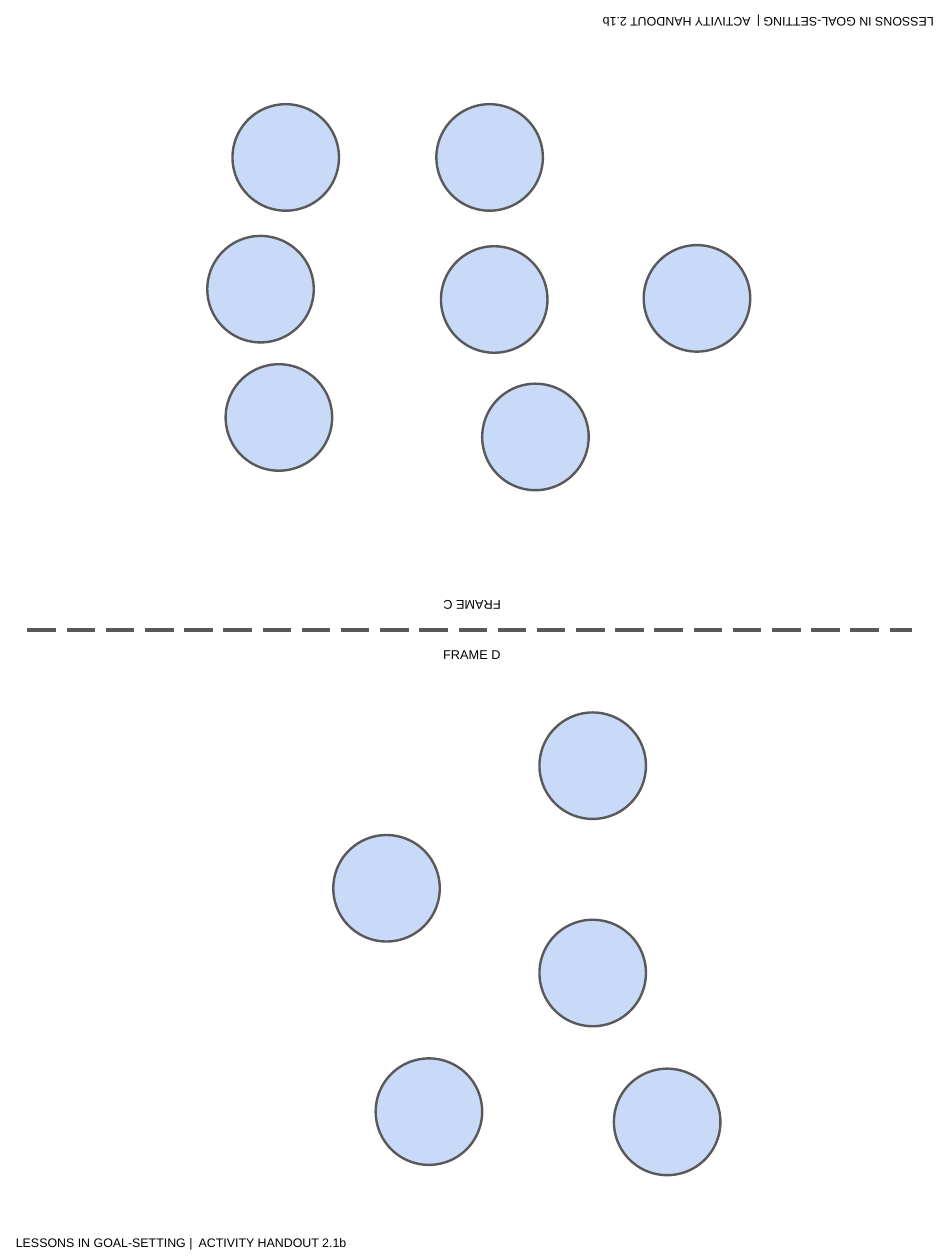
from pptx import Presentation
from pptx.dml.color import RGBColor
from pptx.enum.dml import MSO_LINE
from pptx.enum.shapes import MSO_CONNECTOR, MSO_SHAPE
from pptx.enum.text import MSO_AUTO_SIZE, PP_ALIGN
from pptx.oxml.ns import qn
from pptx.util import Pt
from lxml import etree

PX = 9144
WIDTH, HEIGHT = 825, 1100
FONT = "Arial"
BLACK = RGBColor(0x00, 0x00, 0x00)
GRAY = RGBColor(0x59, 0x59, 0x59)
PALE_BLUE = RGBColor(0xC9, 0xDA, 0xF8)
OVAL = MSO_SHAPE.OVAL
STRAIGHT = MSO_CONNECTOR.STRAIGHT
LONG_DASH = MSO_LINE.LONG_DASH
GROW = MSO_AUTO_SIZE.SHAPE_TO_FIT_TEXT
LEFT, CENTER = PP_ALIGN.LEFT, PP_ALIGN.CENTER

DIAMETER = 93
FRAME_C_CIRCLES = [(181, 206), (385, 215), (203, 91), (381, 91),
                   (197, 318), (421, 335), (562, 214)]
FRAME_D_CIRCLES = [(291, 729), (471, 622), (328, 924), (536, 933), (471, 803)]
HANDOUT = "LESSONS IN GOAL-SETTING |  ACTIVITY HANDOUT 2.1b"


class Handout:
    def __init__(self, slide):
        self.slide = slide

    def circles(self, positions):
        group = self.slide.shapes.add_group_shape()
        for left, top in positions:
            shape = group.shapes.add_shape(
                OVAL, left * PX, top * PX, DIAMETER * PX, DIAMETER * PX)
            shape.shadow.inherit = False
            shape.fill.solid()
            shape.fill.fore_color.rgb = PALE_BLUE
            shape.line.color.rgb = GRAY
            shape.line.width = Pt(1.5)

    def fold_line(self, left, right, y):
        connector = self.slide.shapes.add_connector(
            STRAIGHT, left * PX, y * PX, right * PX, y * PX)
        connector.line.color.rgb = GRAY
        connector.line.width = Pt(2.25)
        connector.line.dash_style = LONG_DASH
        etree.SubElement(connector._element.spPr, qn("a:effectLst"))

    def label(self, text, left, top, width, height, size, align=LEFT, rotation=0):
        box = self.slide.shapes.add_textbox(
            left * PX, top * PX, width * PX, height * PX)
        box.rotation = rotation
        frame = box.text_frame
        frame.word_wrap = True
        frame.auto_size = GROW
        frame.margin_left = frame.margin_right = 10 * PX
        frame.margin_top = frame.margin_bottom = 10 * PX
        paragraph = frame.paragraphs[0]
        paragraph.alignment = align
        run = paragraph.add_run()
        run.text = text
        run.font.name = FONT
        run.font.size = Pt(size)
        run.font.color.rgb = BLACK


def main():
    presentation = Presentation()
    presentation.slide_width = WIDTH * PX
    presentation.slide_height = HEIGHT * PX
    slide = presentation.slides.add_slide(presentation.slide_layouts[6])
    handout = Handout(slide)

    handout.circles(FRAME_C_CIRCLES)
    handout.fold_line(24, 796, HEIGHT // 2)
    handout.circles(FRAME_D_CIRCLES)
    handout.label(HANDOUT, 4, 1072, 336, 33, 7.8)
    handout.label(HANDOUT, 489, 0, 336, 33, 7.8, rotation=180)
    handout.label("FRAME C", 369, 508, 86, 34, 8, CENTER, 180)
    handout.label("FRAME D", 369, 558, 86, 34, 8, CENTER)

    presentation.save("out.pptx")


if __name__ == "__main__":
    main()
